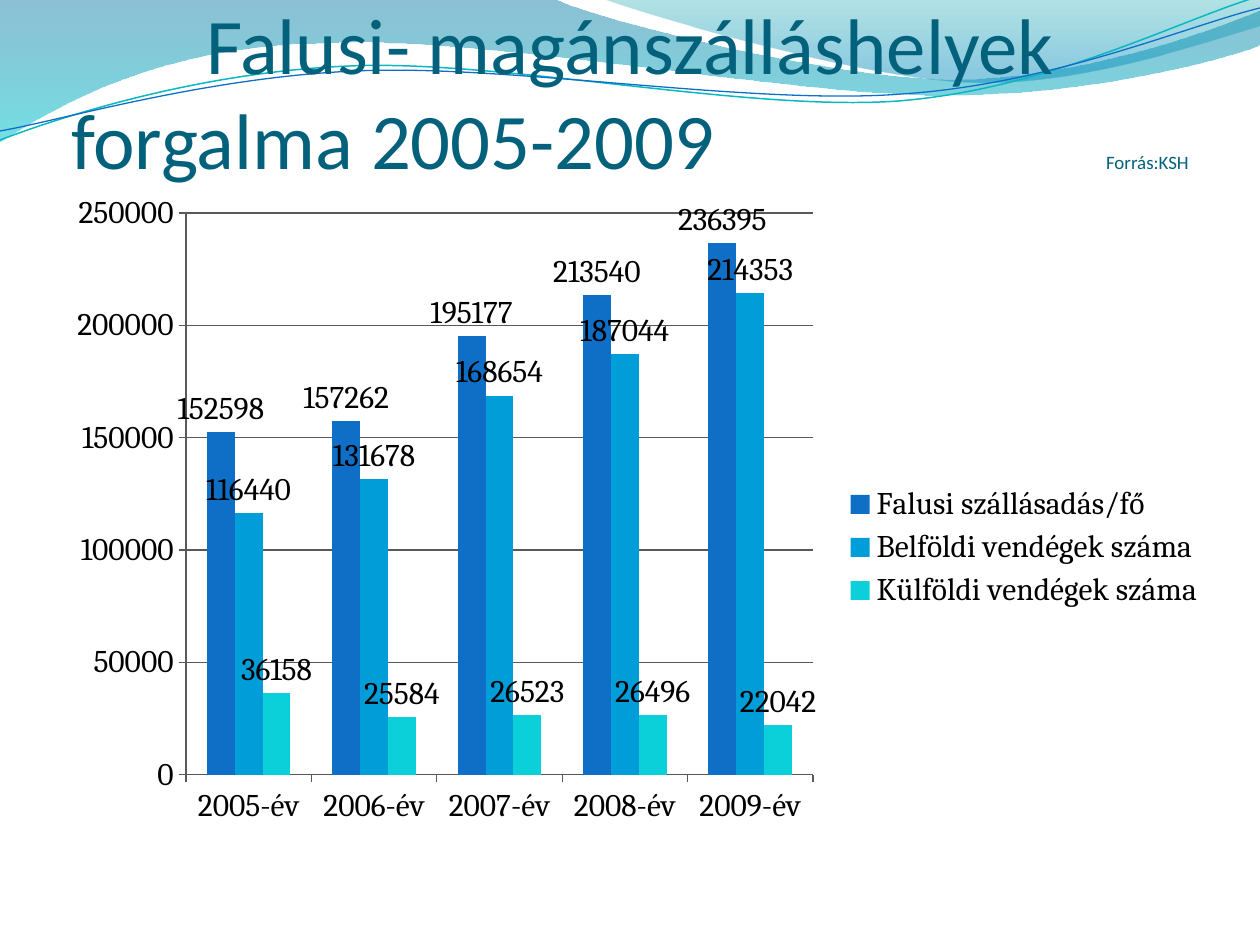
from lxml import etree
from pptx import Presentation
from pptx.chart.data import CategoryChartData
from pptx.dml.color import RGBColor
from pptx.enum.chart import (XL_CHART_TYPE, XL_LABEL_POSITION, XL_LEGEND_POSITION,
                             XL_TICK_MARK)
from pptx.enum.text import MSO_ANCHOR, PP_ALIGN
from pptx.oxml import parse_xml
from pptx.oxml.ns import nsdecls, qn
from pptx.util import Pt

EMU_PER_PX = 914400 / 126
COLORS = {
    "title": "04617B", "text": "000000", "axis": "595959",
    "wave_top": "0074A1", "wave_bottom": "00C6CF",
    "corner_top": "00A1A9", "corner_bottom": "008BBF",
    "teal_line": "0AB8BF", "blue": "0F6FC6",
    "sky": "009DD9", "cyan": "0BD0D9",
}
CATEGORIES = [f"{year}-év" for year in range(2005, 2010)]
SERIES = [
    ("Falusi szállásadás/fő", "blue", (152598, 157262, 195177, 213540, 236395)),
    ("Belföldi vendégek száma", "sky", (116440, 131678, 168654, 187044, 214353)),
    ("Külföldi vendégek száma", "cyan", (36158, 25584, 26523, 26496, 22042)),
]

# Outlines: a start point, then line ends (2 numbers) or Bézier curves (6 numbers)
WAVE = [(0, 0), (554, -1), (600, 21, 837, 79, 955, 79), (1074, 79, 1207, 33, 1260, 11),
        (1261, 45), (1239, 55, 1096, 96, 940, 95), (784, 95, 481, 35, 324, 43),
        (162, 45, 58, 105, -1, 142)]
CORNER = [(603, -1), (641, 14, 859, 78, 969, 82), (1079, 87, 1211, 40, 1260, 26),
          (1260, 0)]
TEAL_LINE = [(0, 140), (60, 117, 199, 72, 349, 66), (498, 59, 747, 112, 898, 101),
             (1050, 89, 1182, 19, 1257, -3)]
BLUE_LINE = [(0, 131), (59, 121, 207, 77, 357, 71), (508, 64, 752, 106, 903, 94),
             (1053, 84, 1187, 26, 1260, 8)]


def px(length):
    return round(length * EMU_PER_PX)


def rgb(name):
    return RGBColor.from_string(COLORS[name])


def add_outline(slide, left, top, outline, close):
    points = [(px(left + x), px(top + y))
              for segment in outline for x, y in zip(segment[::2], segment[1::2])]
    builder = slide.shapes.build_freeform(*points[0], scale=1.0)
    builder.add_line_segments(points[1:], close=close)
    shape = builder.convert_to_shape()
    shape.shadow.inherit = False

    # Join each three points of a curve into one Bézier segment
    lines = iter(list(shape._element.iter(qn("a:lnTo"))))
    for segment in outline[1:]:
        first = next(lines)
        if len(segment) == 6:
            first.tag = qn("a:cubicBezTo")
            for _ in range(2):
                line = next(lines)
                first.append(line[0])
                line.getparent().remove(line)
    return shape


def add_waves(slide, left, top):
    # Translucent gradient areas: colour, position and opacity of each stop
    for outline, stops in (
            (WAVE, (("wave_top", 0, 45), ("wave_bottom", 1, 55))),
            (CORNER, (("corner_top", 0, 30), ("corner_bottom", 0.8, 45)))):
        shape = add_outline(slide, left, top, outline, True)
        shape.line.fill.background()
        shape.fill.gradient()
        shape.fill.gradient_angle = 270
        for stop, (color, position, _) in zip(shape.fill.gradient_stops, stops):
            stop.color.rgb = rgb(color)
            stop.position = position
        for element, (_, _, opacity) in zip(shape._element.iter(qn("a:srgbClr")), stops):
            etree.SubElement(element, qn("a:alpha")).set("val", str(opacity * 1000))

    # Thin crossing lines
    for outline, color, width in ((TEAL_LINE, "teal_line", 0.85),
                                  (BLUE_LINE, "blue", 0.75)):
        shape = add_outline(slide, left, top, outline, False)
        shape.fill.background()
        shape.line.color.rgb = rgb(color)
        shape.line.width = Pt(width)


def add_title(slide, left, top, width, height):
    text_frame = slide.shapes.add_textbox(px(left), px(top), px(width), px(height)).text_frame
    text_frame.word_wrap = True
    text_frame.vertical_anchor = MSO_ANCHOR.BOTTOM
    text_frame.margin_left = text_frame.margin_right = text_frame.margin_bottom = 0
    paragraph = text_frame.paragraphs[0]
    paragraph.alignment = PP_ALIGN.CENTER
    for text, size in (("Falusi- magánszálláshelyek forgalma 2005-2009", 45),
                       (" ", 45), ("Forrás:KSH", 10.8)):
        run = paragraph.add_run()
        run.text = text
        run.font.name = "Calibri"
        run.font.size = Pt(size)
        run.font.color.rgb = rgb("title")

    # Wide letter spacing sets the source note apart from the title
    paragraph.runs[1].font._element.set("spc", "21350")


def add_visitor_chart(slide, left, top, width, height):
    data = CategoryChartData()
    data.categories = CATEGORIES
    for name, _, values in SERIES:
        data.add_series(name, values)
    chart = slide.shapes.add_chart(XL_CHART_TYPE.COLUMN_CLUSTERED, px(left), px(top),
                                   px(width), px(height), data).chart
    chart.has_title = False
    chart.font.name = "Cambria"
    chart.font.size = Pt(18)
    chart.font.color.rgb = rgb("text")
    chart.has_legend = True
    chart.legend.position = XL_LEGEND_POSITION.RIGHT
    chart.legend.include_in_layout = False

    # Axes and gridlines
    value_axis = chart.value_axis
    value_axis.minimum_scale, value_axis.maximum_scale = 0, 250000
    value_axis.major_unit = 50000
    value_axis.has_major_gridlines = True
    value_axis.major_gridlines.format.line.color.rgb = rgb("axis")
    for axis in (chart.category_axis, value_axis):
        axis.major_tick_mark = XL_TICK_MARK.OUTSIDE
        axis.format.line.color.rgb = rgb("axis")

    # Columns and their value labels
    plot = chart.plots[0]
    plot.gap_width = 150
    plot.overlap = 0
    plot.vary_by_categories = False
    for series, (_, color, _) in zip(plot.series, SERIES):
        series.format.fill.solid()
        series.format.fill.fore_color.rgb = rgb(color)
        labels = series.data_labels
        labels.show_value = True
        labels.position = XL_LABEL_POSITION.OUTSIDE_END

    # Fixed inner plot area, as fractions of the chart
    plot_area = chart._chartSpace.chart.plotArea
    for layout in plot_area.findall(qn("c:layout")):
        plot_area.remove(layout)
    plot_area.insert(0, parse_xml(
        f'<c:layout {nsdecls("c")}><c:manualLayout><c:layoutTarget val="inner"/>'
        '<c:xMode val="edge"/><c:yMode val="edge"/>'
        f'<c:x val="{151 / width}"/><c:y val="{28 / height}"/>'
        f'<c:w val="{627 / width}"/><c:h val="{562 / height}"/>'
        '</c:manualLayout></c:layout>'))


def main():
    presentation = Presentation()
    presentation.slide_width, presentation.slide_height = px(1260), px(945)
    slide = presentation.slides.add_slide(presentation.slide_layouts[6])
    add_waves(slide, 0, 0)
    add_title(slide, 63, 0, 1134, 185)
    add_visitor_chart(slide, 35, 185, 1183, 725)
    presentation.save("out.pptx")


if __name__ == "__main__":
    main()
